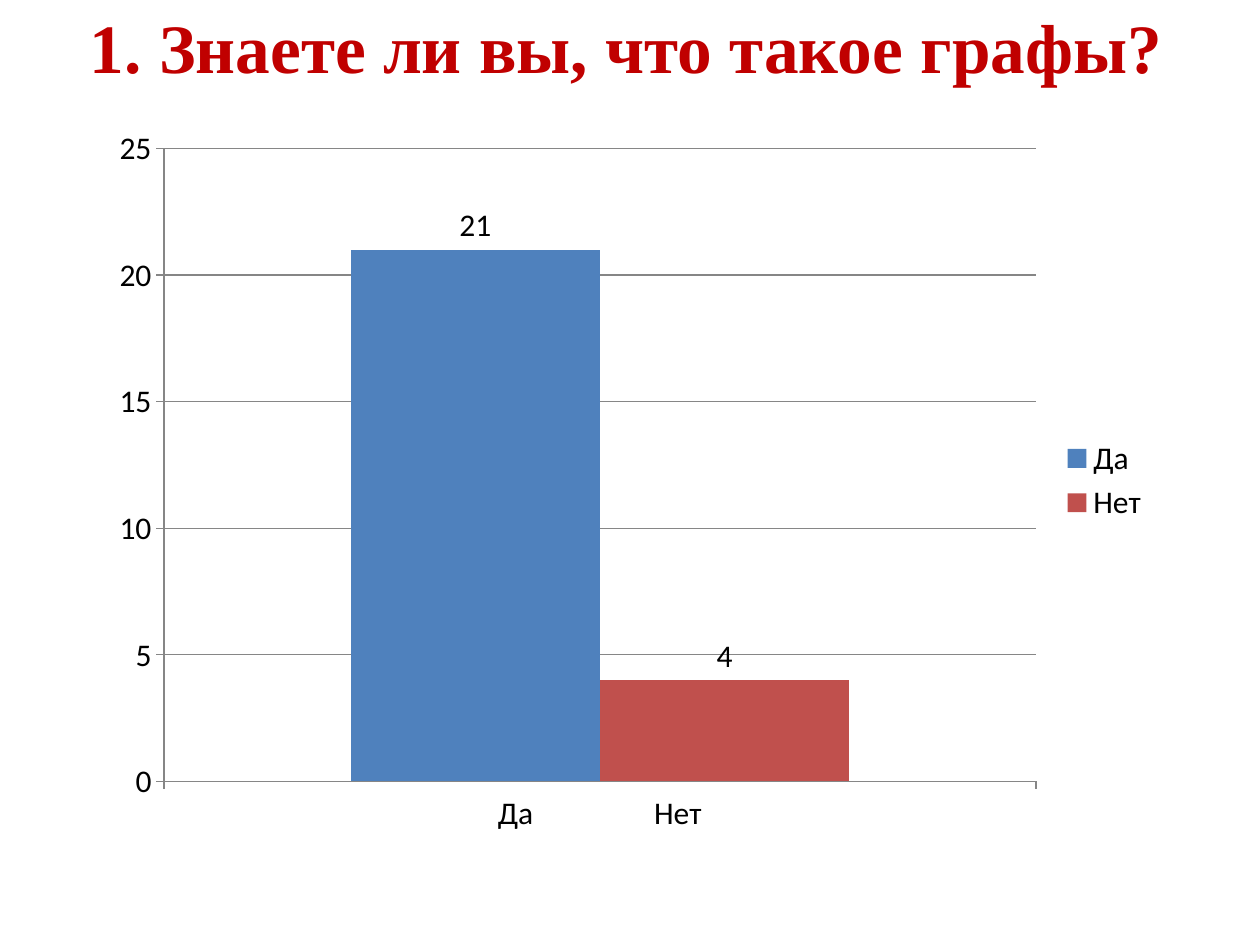
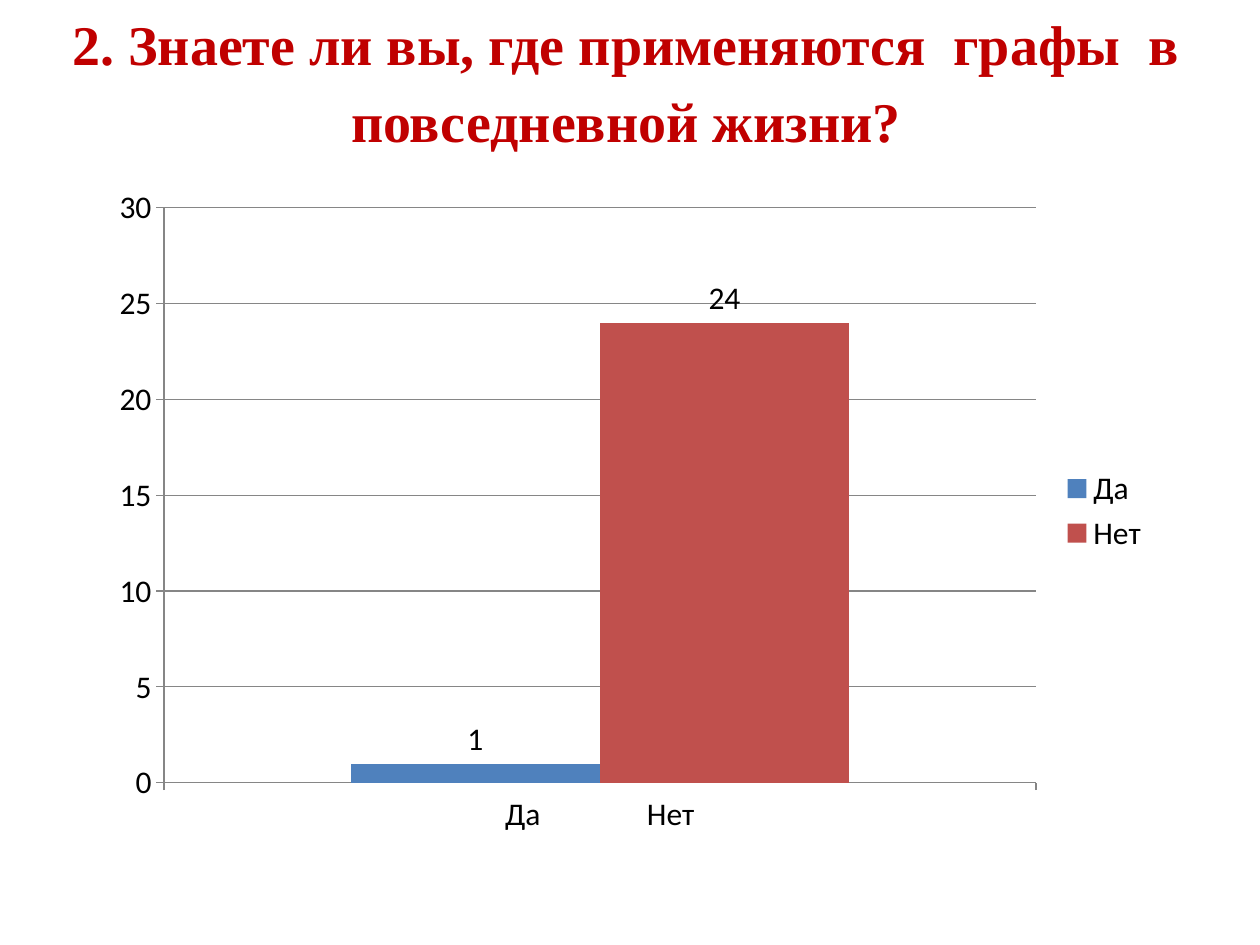
from dataclasses import dataclass

from pptx import Presentation
from pptx import util as u
from pptx.chart.data import CategoryChartData
from pptx.dml.color import RGBColor
from pptx.enum import chart as charts
from pptx.enum import text as texts

ANSWERS = ("Да", "Нет")
QUESTIONS = [
    dict(title="1. Знаете ли вы, что такое графы?", votes=(21, 4),
         size=39.6, line_spacing=1.0, title_height=0.72,
         chart_top=0.91, axis_max=25, label_gap=17),
    dict(title="2. Знаете ли вы, где применяются  графы  в повседневной жизни?",
         votes=(1, 24), size=32, line_spacing=1.15, title_height=1.22,
         chart_top=1.39, axis_max=30, label_gap=15),
]


@dataclass(frozen=True)
class Theme:
    background: str = "FFFFFF"
    title: str = "C00000"
    text: str = "000000"
    axis: str = "868686"
    answers: tuple = ("4F81BD", "C0504D")
    title_font: str = "Times New Roman"
    chart_font: str = "Calibri"
    chart_size: float = 18


THEME = Theme()
WIDTH, HEIGHT = 10, 7.5
TITLE_LEFT, TITLE_WIDTH = 0.47, 9
CHART_LEFT, CHART_BOTTOM = 0.78, 6.72
AXIS_STEP = 5


def rgb(value):
    return RGBColor.from_string(value)


def set_font(font, name, size, color, bold=False):
    font.name, font.size, font.bold = name, u.Pt(size), bold
    font.color.rgb = rgb(color)


def add_text(slide, content, box, *, font, size, color, bold=False,
             line_spacing=1.0, align=texts.PP_ALIGN.CENTER):
    frame = slide.shapes.add_textbox(*map(u.Inches, box)).text_frame
    frame.word_wrap = True
    frame.vertical_anchor = texts.MSO_ANCHOR.MIDDLE
    frame.margin_left = frame.margin_right = 0
    paragraph = frame.paragraphs[0]
    paragraph.alignment, paragraph.line_spacing = align, line_spacing
    run = paragraph.add_run()
    run.text = content
    set_font(run.font, font, size, color, bold)


def style_line(line):
    line.color.rgb = rgb(THEME.axis)
    line.width = u.Pt(0.75)


def add_votes_chart(slide, votes, top, axis_max, label_gap):
    data = CategoryChartData()
    # Both answers share one category, so its label spreads them under the bars.
    data.categories = [(" " * label_gap).join(ANSWERS)]
    for answer, count in zip(ANSWERS, votes):
        data.add_series(answer, [count])

    box = (CHART_LEFT, top, WIDTH - 2 * CHART_LEFT, CHART_BOTTOM - top)
    chart = slide.shapes.add_chart(charts.XL_CHART_TYPE.COLUMN_CLUSTERED,
                                   *map(u.Inches, box), data).chart
    chart.has_title = False
    set_font(chart.font, THEME.chart_font, THEME.chart_size, THEME.text)
    chart.has_legend = True
    chart.legend.position = charts.XL_LEGEND_POSITION.RIGHT
    chart.legend.include_in_layout = False

    for axis in (chart.category_axis, chart.value_axis):
        axis.major_tick_mark = charts.XL_TICK_MARK.OUTSIDE
        axis.minor_tick_mark = charts.XL_TICK_MARK.NONE
        style_line(axis.format.line)
    values = chart.value_axis
    values.minimum_scale, values.maximum_scale = 0, axis_max
    values.major_unit = AXIS_STEP
    values.has_major_gridlines = True
    style_line(values.major_gridlines.format.line)

    plot = chart.plots[0]
    plot.gap_width, plot.overlap = 150, 0
    plot.vary_by_categories = False
    for series, color in zip(plot.series, THEME.answers):
        series.format.fill.solid()
        series.format.fill.fore_color.rgb = rgb(color)
        series.data_labels.show_value = True
        series.data_labels.position = charts.XL_LABEL_POSITION.OUTSIDE_END


def add_question(presentation, question):
    slide = presentation.slides.add_slide(presentation.slide_layouts[6])
    slide.background.fill.solid()
    slide.background.fill.fore_color.rgb = rgb(THEME.background)
    add_text(slide, question["title"],
             (TITLE_LEFT, 0, TITLE_WIDTH, question["title_height"]),
             font=THEME.title_font, size=question["size"], color=THEME.title,
             bold=True, line_spacing=question["line_spacing"])
    add_votes_chart(slide, question["votes"], question["chart_top"],
                    question["axis_max"], question["label_gap"])


def main():
    presentation = Presentation()
    presentation.slide_width = u.Inches(WIDTH)
    presentation.slide_height = u.Inches(HEIGHT)
    for question in QUESTIONS:
        add_question(presentation, question)
    presentation.save("out.pptx")


if __name__ == "__main__":
    main()
